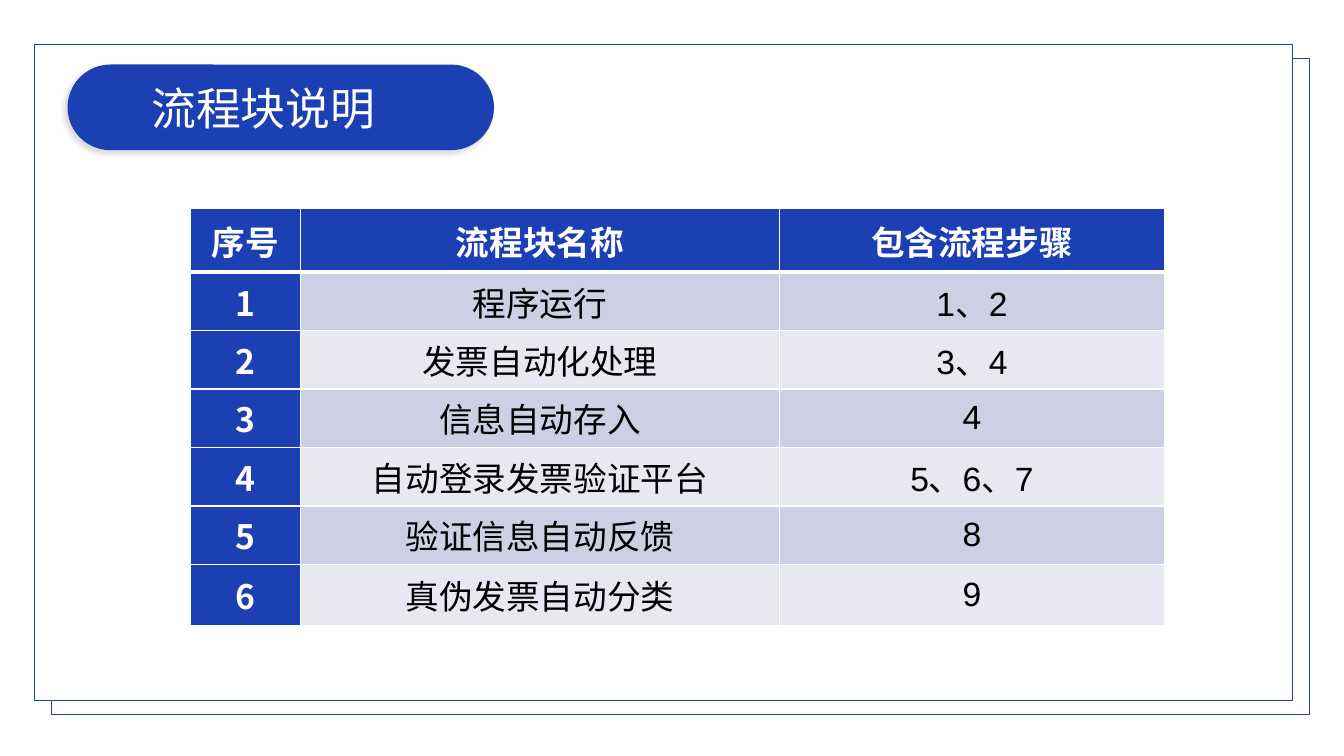
from lxml.etree import SubElement
from pptx import Presentation
from pptx.dml.color import RGBColor
from pptx.enum.shapes import MSO_SHAPE
from pptx.enum.text import MSO_ANCHOR, PP_ALIGN
from pptx.oxml import parse_xml
from pptx.oxml.ns import nsdecls, qn
from pptx.util import Inches, Pt

BLUE, WHITE, BLACK = "1C40B3", "FFFFFF", "000000"
BANDS = ["CDCFE5", "E8E8F2"]
CJK_FONT = "Noto Sans CJK SC"


def color(value):
    return RGBColor.from_string(value)


def set_font(para, size, name, value, bold=False):
    font = para.font
    font.size, font.name, font.bold = Pt(size), name, bold
    font.color.rgb = color(value)
    east_asian = SubElement(font._element, qn("a:ea"))
    east_asian.set("typeface", CJK_FONT)


deck = Presentation()
deck.slide_width, deck.slide_height = Inches(13.33), Inches(7.5)
page = deck.slides.add_slide(deck.slide_layouts[6])

# Two offset frames
for left, top in [(0.51, 0.58), (0.34, 0.44)]:
    frame = page.shapes.add_shape(
        MSO_SHAPE.RECTANGLE, Inches(left), Inches(top), Inches(12.48), Inches(6.51))
    frame.shadow.inherit = False
    frame.fill.solid()
    frame.fill.fore_color.rgb = color(WHITE)
    frame.line.color.rgb = color(BLUE)
    frame.line.width = Pt(0.5)

# Title pill with a soft shadow
title_group = page.shapes.add_group_shape()
pill = title_group.shapes.add_shape(
    MSO_SHAPE.ROUNDED_RECTANGLE, Inches(0.67), Inches(0.64), Inches(4.23), Inches(0.85))
pill.adjustments[0] = 0.5
pill.fill.solid()
pill.fill.fore_color.rgb = color(BLUE)
pill.line.fill.background()
pill.shadow.inherit = False
pill._element.spPr.find(qn("a:effectLst")).append(parse_xml(
    f'<a:outerShdw {nsdecls("a")} blurRad="{Pt(4)}" dist="{Pt(3)}" dir="8100000" '
    f'algn="tr" rotWithShape="0"><a:srgbClr val="{BLACK}"><a:alpha val="14000"/>'
    '</a:srgbClr></a:outerShdw>'))

# Microscope icon
microscope_points = [
    (1.23, 1.25), (1.19, 1.25), (1.17, 1.19), (1.18, 1.18), (1.23, 1.13),
    (1.25, 1.06), (1.23, 0.98), (1.19, 0.93), (1.17, 0.92), (1.18, 0.91),
    (1.17, 0.9), (1.2, 0.87), (1.22, 0.87), (1.22, 0.85), (1.17, 0.82),
    (1.15, 0.82), (1.15, 0.84), (1.16, 0.84), (1.14, 0.87), (1.12, 0.88),
    (1.04, 0.98), (1.05, 1), (1.03, 1.02), (1, 1), (0.98, 1),
    (0.98, 1.02), (0.99, 1.02), (0.98, 1.04), (0.99, 1.05), (1.01, 1.03),
    (1.02, 1.04), (1.01, 1.05), (1.03, 1.07), (1.05, 1.07), (1.05, 1.06),
    (1.08, 1.08), (1.09, 1.09), (1.1, 1.08), (1.1, 1.06), (1.06, 1.04),
    (1.08, 1.02), (1.1, 1.02), (1.16, 0.93), (1.2, 0.98), (1.22, 1.06),
    (1.2, 1.12), (1.17, 1.17), (1.09, 1.17), (0.97, 1.09), (0.96, 1.09),
    (0.96, 1.1), (1.08, 1.19), (1.08, 1.25), (0.93, 1.25), (0.92, 1.26),
    (0.92, 1.29), (0.93, 1.31), (1.23, 1.31), (1.24, 1.29), (1.24, 1.26),
]
outline = title_group.shapes.build_freeform(*microscope_points[0], scale=Inches(1))
outline.add_line_segments(microscope_points[1:], close=True)
microscope = outline.convert_to_shape()
microscope.shadow.inherit = False
microscope.fill.solid()
microscope.fill.fore_color.rgb = color(WHITE)
microscope.line.fill.background()

# Title text
title = title_group.shapes.add_textbox(Inches(1.5), Inches(0.8), Inches(3.31), Inches(0.54))
box = title.text_frame
box.word_wrap = True
box.margin_left = box.margin_right = box.margin_top = box.margin_bottom = 0
box.text = "流程块说明"
set_font(box.paragraphs[0], 32, "Calibri", WHITE)

# Table of process blocks
rows = [
    ("序号", "流程块名称", "包含流程步骤"),
    ("1", "程序运行", "1、2"),
    ("2", "发票自动化处理", "3、4"),
    ("3", "信息自动存入", "4"),
    ("4", "自动登录发票验证平台", "5、6、7"),
    ("5", "验证信息自动反馈", "8"),
    ("6", "真伪发票自动分类", "9"),
]
table = page.shapes.add_table(
    len(rows), 3, Inches(1.89), Inches(2.07), Inches(9.66), Inches(4.12)).table
for column, width in zip(table.columns, [1.09, 4.75, 3.82]):
    column.width = Inches(width)
for row, height in zip(table.rows, [0.63] + [0.58] * 5 + [0.61]):
    row.height = Inches(height)

for row_index, texts in enumerate(rows):
    for column_index, text in enumerate(texts):
        cell = table.cell(row_index, column_index)
        is_header = row_index == 0
        is_blue = is_header or column_index == 0
        cell.fill.solid()
        cell.fill.fore_color.rgb = color(BLUE if is_blue else BANDS[(row_index - 1) % 2])
        cell.vertical_anchor = MSO_ANCHOR.MIDDLE
        cell.margin_left = cell.margin_right = Inches(0.07)
        cell.margin_top = cell.margin_bottom = 0
        cell.text = text
        para = cell.text_frame.paragraphs[0]
        para.alignment = PP_ALIGN.CENTER
        set_font(para, 24, CJK_FONT if is_blue and not is_header else "Arial",
                 WHITE if is_blue else BLACK, is_blue)

        # White borders, thicker under the header
        borders = {"lnL": 1, "lnR": 1, "lnT": 3 if row_index == 1 else 1,
                   "lnB": 3 if is_header else 1}
        for position, (side, width) in enumerate(borders.items()):
            cell._tc.tcPr.insert(position, parse_xml(
                f'<a:{side} {nsdecls("a")} w="{Pt(width)}"><a:solidFill>'
                f'<a:srgbClr val="{WHITE}"/></a:solidFill></a:{side}>'))

deck.save("out.pptx")
